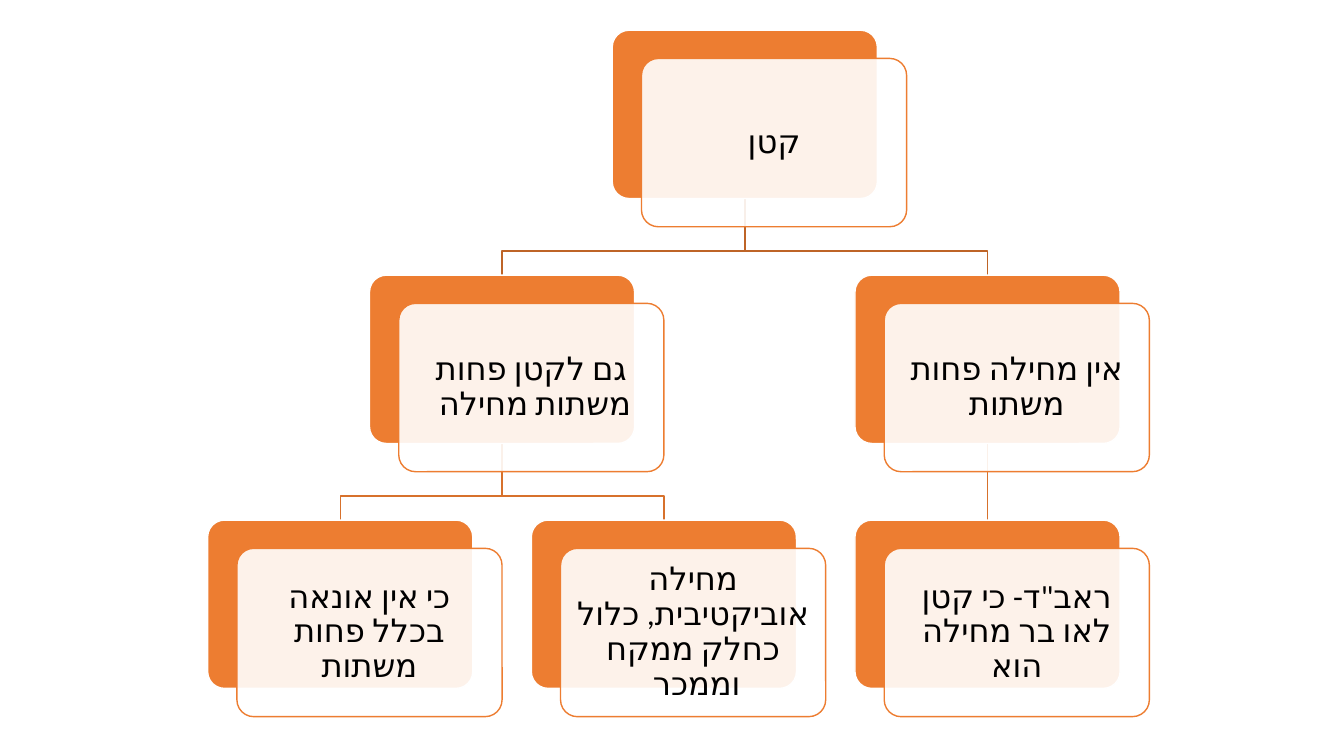
import pptx
import pptx.util
import pptx.dml.color
import pptx.enum.shapes
import pptx.enum.text
import pptx.oxml.ns
import lxml.etree

Inches = pptx.util.Inches
qn = pptx.oxml.ns.qn

# Content: name -> (text, column, level, parent)
NODES = {
    "minor": ("קטן", 1.25, 0, None),
    "no_waiver": ("אין מחילה פחות משתות", 2, 1, "minor"),
    "raavad": ('ראב"ד- כי קטן לאו בר מחילה הוא', 2, 2, "no_waiver"),
    "waiver": ("גם לקטן פחות משתות מחילה ", 0.5, 1, "minor"),
    "objective": ("מחילה אוביקטיבית, כלול כחלק ממקח וממכר ", 1, 2, "waiver"),
    "no_fraud": ("כי אין אונאה בכלל פחות משתות", 0, 2, "waiver"),
}
COLORS = {"back": "ED7D31", "front": "FFFFFF", "text": "000000"}
LINK_COLORS = {1: "BE6427", 2: "D7712C"}

# Layout in inches
LEFT, TOP = 2.06, 0.3
COLUMN_STEP, LEVEL_STEP = 3.21, 2.43
CARD_W, CARD_H = 2.63, 1.67
FRONT_DX, FRONT_DY = 0.29, 0.28
BEND = 0.52


def rgb(color):
    return pptx.dml.color.RGBColor.from_string(color)


def corner(name):
    text, column, level, parent = NODES[name]
    return LEFT + column * COLUMN_STEP, TOP + level * LEVEL_STEP


def set_line(shape, color):
    shape.line.color.rgb = rgb(color)
    shape.line.width = pptx.util.Pt(1)


def write(shape, text, size=23, font="Calibri", color=COLORS["text"]):
    frame = shape.text_frame
    frame.word_wrap = True
    frame.vertical_anchor = pptx.enum.text.MSO_ANCHOR.MIDDLE
    frame.margin_left = frame.margin_right = Inches(0.1)
    frame.margin_top = frame.margin_bottom = Inches(0.1)
    paragraph = frame.paragraphs[0]
    paragraph.alignment = pptx.enum.text.PP_ALIGN.CENTER
    paragraph.line_spacing = 0.9
    paragraph._p.get_or_add_pPr().set("rtl", "1")
    run = paragraph.add_run()
    run.text = text
    run.font.size = pptx.util.Pt(size)
    run.font.name = font
    run.font.color.rgb = rgb(color)
    # Hebrew takes the complex-script font
    properties = run._r.get_or_add_rPr()
    properties.set("lang", "he-IL")
    lxml.etree.SubElement(properties, qn("a:cs")).set("typeface", font)


def add_card(shapes, x, y, fill, line, opacity=100):
    card = shapes.add_shape(
        pptx.enum.shapes.MSO_SHAPE.ROUNDED_RECTANGLE,
        Inches(x), Inches(y), Inches(CARD_W), Inches(CARD_H))
    card.adjustments[0] = 0.1
    card.shadow.inherit = False
    card.fill.solid()
    card.fill.fore_color.rgb = rgb(fill)
    if opacity < 100:
        color = card._element.spPr.find(qn("a:solidFill"))[0]
        lxml.etree.SubElement(color, qn("a:alpha")).set("val", str(opacity * 1000))
    set_line(card, line)
    return card


def add_link(shapes, parent, child, color):
    (parent_x, parent_y), (child_x, end_y) = corner(parent), corner(child)
    start_x, end_x = parent_x + CARD_W / 2, child_x + CARD_W / 2
    start_y = parent_y + CARD_H
    if start_x == end_x:
        link = shapes.add_connector(
            pptx.enum.shapes.MSO_CONNECTOR.STRAIGHT,
            Inches(start_x), Inches(start_y), Inches(end_x), Inches(end_y))
        lxml.etree.SubElement(link._element.spPr, qn("a:effectLst"))
    else:
        bend_y = start_y + BEND
        outline = shapes.build_freeform(Inches(start_x), Inches(start_y))
        outline.add_line_segments(
            [(Inches(x), Inches(y)) for x, y in
             ((start_x, bend_y), (end_x, bend_y), (end_x, end_y))],
            close=False)
        link = outline.convert_to_shape()
        link.fill.background()
        link.shadow.inherit = False
    set_line(link, color)


def main():
    deck = pptx.Presentation()
    deck.slide_width, deck.slide_height = Inches(13.33), Inches(7.5)
    shapes = deck.slides.add_slide(deck.slide_layouts[6]).shapes

    # Links lie behind the cards
    for name, (text, column, level, parent) in NODES.items():
        if parent:
            add_link(shapes, parent, name, LINK_COLORS[level])

    # Each node is a solid card with a translucent text card over it
    for name, (text, *place) in NODES.items():
        x, y = corner(name)
        add_card(shapes, x, y, COLORS["back"], COLORS["front"])
        front = add_card(shapes, x + FRONT_DX, y + FRONT_DY,
                         COLORS["front"], COLORS["back"], opacity=90)
        write(front, text)

    deck.save("out.pptx")


if __name__ == "__main__":
    main()
